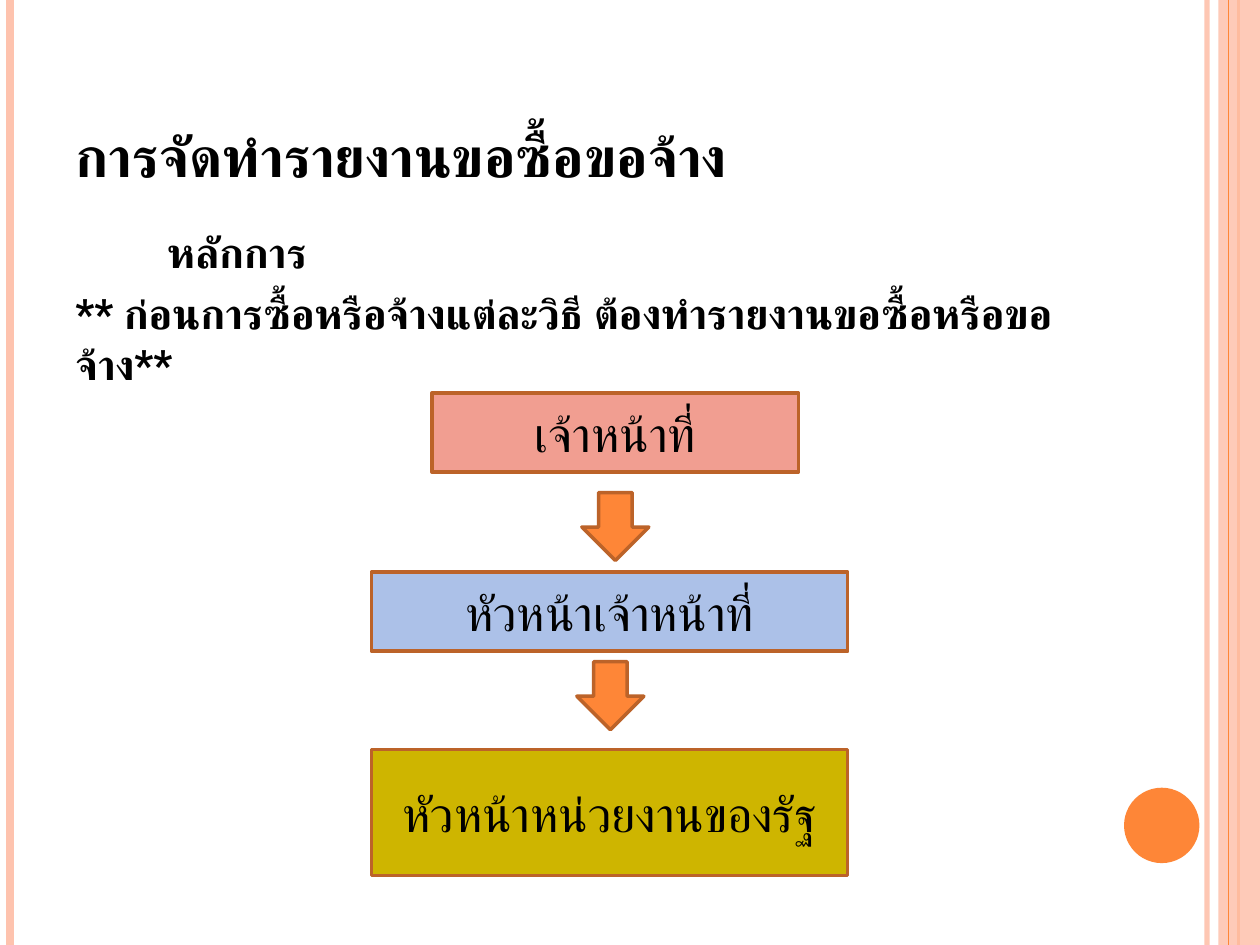
from lxml.etree import SubElement
from pptx import Presentation
from pptx.dml.color import RGBColor
from pptx.enum.shapes import MSO_CONNECTOR, MSO_SHAPE
from pptx.enum.text import MSO_ANCHOR, PP_ALIGN
from pptx.oxml.ns import qn
from pptx.util import Cm, Pt

BLACK = RGBColor(0x00, 0x00, 0x00)
PEACH = RGBColor(0xFE, 0xC3, 0xAE)
ORANGE = RGBColor(0xFE, 0x86, 0x37)
BROWN = RGBColor(0xBC, 0x63, 0x29)
SALMON = RGBColor(0xF1, 0x9E, 0x91)
BLUE = RGBColor(0xAC, 0xC1, 0xE8)
OLIVE = RGBColor(0xCE, 0xB5, 0x00)

SLIDE_WIDTH, SLIDE_HEIGHT = Cm(25.4), Cm(19.05)
TEXT_LEFT, TEXT_WIDTH = Cm(1.27), Cm(20.75)


def set_opacity(element, percent):
    """Make the solid colour inside a fill or line element see-through."""
    color = next(element.iter(qn("a:srgbClr")))
    SubElement(color, qn("a:alpha"), val=str(percent * 1000))


def add_run(para, text, font_name, size, bold=False):
    run = para.add_run()
    run.text = text
    font = run.font
    font.name, font.size, font.bold = font_name, Pt(size), bold
    font.color.rgb = BLACK
    return run


def add_stripe(slide, x, color, weight, opacity=100):
    """Draw a vertical line over the full slide height."""
    stripe = slide.shapes.add_connector(
        MSO_CONNECTOR.STRAIGHT, Cm(x), 0, Cm(x), SLIDE_HEIGHT)
    stripe.line.color.rgb = color
    stripe.line.width = Pt(weight)
    properties = stripe._element.spPr
    SubElement(properties, qn("a:effectLst"))
    if opacity < 100:
        set_opacity(properties, opacity)


def add_figure(slide, kind, left, top, width, height, fill, outline=None):
    figure = slide.shapes.add_shape(
        kind, Cm(left), Cm(top), Cm(width), Cm(height))
    figure.shadow.inherit = False
    figure.fill.solid()
    figure.fill.fore_color.rgb = fill
    if outline is None:
        figure.line.fill.background()
    else:
        figure.line.color.rgb = outline
        figure.line.width = Pt(2)
    return figure


def add_step(slide, text, left, top, width, height, fill):
    box = add_figure(slide, MSO_SHAPE.RECTANGLE,
                     left, top, width, height, fill, BROWN)
    frame = box.text_frame
    frame.word_wrap = True
    frame.vertical_anchor = MSO_ANCHOR.MIDDLE
    para = frame.paragraphs[0]
    para.alignment = PP_ALIGN.CENTER
    add_run(para, text, "Cambria", 28)


def add_side_decoration(slide):
    add_stripe(slide, 24.33, PEACH, 3, opacity=93)
    add_stripe(slide, 0.2, PEACH, 4.5)
    add_stripe(slide, 24.97, ORANGE, 1.5)
    band = add_figure(slide, MSO_SHAPE.RECTANGLE, 24.56, 0, 0.84, 19.05, PEACH)
    set_opacity(band._element.spPr, 87)
    add_stripe(slide, 24.77, ORANGE, 0.75)
    add_figure(slide, MSO_SHAPE.OVAL, 22.66, 15.88, 1.52, 1.52, ORANGE)


def format_title(slide, text):
    title = slide.shapes.title
    title.left, title.top = TEXT_LEFT, Cm(0.76)
    title.width, title.height = TEXT_WIDTH, Cm(3.18)
    title.text_frame.vertical_anchor = MSO_ANCHOR.BOTTOM
    para = title.text_frame.paragraphs[0]
    para.alignment = PP_ALIGN.LEFT
    run = add_run(para, text, "Calibri", 32, bold=True)
    run.font._element.set("cap", "small")


def add_principle(slide, heading, statement):
    box = slide.shapes.add_textbox(TEXT_LEFT, Cm(4.45), TEXT_WIDTH, Cm(13.54))
    frame = box.text_frame
    frame.word_wrap = True
    first, second = frame.paragraphs[0], frame.add_paragraph()
    first._p.get_or_add_pPr().set("indent", str(Cm(1.85)))
    for para, text in ((first, heading), (second, statement)):
        para.space_before = Pt(6)
        add_run(para, text, "Roboto", 24, bold=True)


def main():
    deck = Presentation()
    deck.slide_width, deck.slide_height = SLIDE_WIDTH, SLIDE_HEIGHT
    slide = deck.slides.add_slide(deck.slide_layouts.get_by_name("Title Only"))

    add_side_decoration(slide)
    format_title(slide, "การจัดทำรายงานขอซื้อขอจ้าง")
    add_principle(
        slide, "หลักการ",
        "** ก่อนการซื้อหรือจ้างแต่ละวิธี ต้องทำรายงานขอซื้อหรือขอจ้าง**")

    add_step(slide, "เจ้าหน้าที่", 8.71, 7.92, 7.39, 1.6, SALMON)
    add_step(slide, "หัวหน้าเจ้าหน้าที่", 7.49, 11.53, 9.6, 1.6, BLUE)
    add_step(slide, "หัวหน้าหน่วยงานของรัฐ", 7.49, 15.11, 9.6, 2.54, OLIVE)
    for left, top in ((11.73, 9.93), (11.63, 13.34)):
        add_figure(slide, MSO_SHAPE.DOWN_ARROW,
                   left, top, 1.35, 1.37, ORANGE, BROWN)

    deck.save("out.pptx")


if __name__ == "__main__":
    main()
